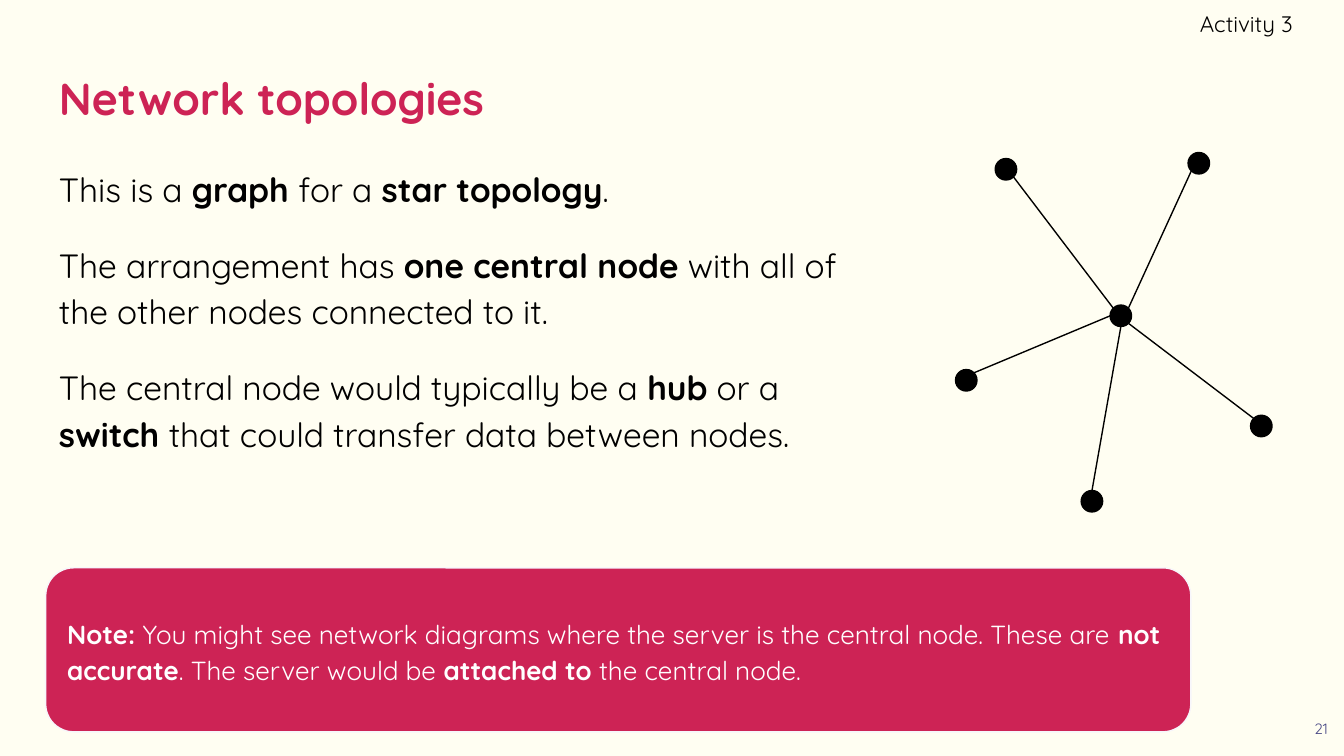
from lxml import etree
from pptx import Presentation
from pptx.dml.color import RGBColor
from pptx.enum.shapes import MSO_CONNECTOR, MSO_SHAPE
from pptx.enum.text import MSO_ANCHOR, PP_ALIGN
from pptx.oxml.ns import qn
from pptx.util import Pt

PX = 4572
FONT = "Quicksand"
BLACK, WHITE, CRIMSON = "000000", "FFFFFF", "CD2355"
CREAM, LILAC, INDIGO = "FFFEF2", "F7F6FB", "494985"
ROUNDED, OVAL = MSO_SHAPE.ROUNDED_RECTANGLE, MSO_SHAPE.OVAL
STRAIGHT = MSO_CONNECTOR.STRAIGHT
TOP, MIDDLE = MSO_ANCHOR.TOP, MSO_ANCHOR.MIDDLE
LEFT, CENTER, RIGHT = PP_ALIGN.LEFT, PP_ALIGN.CENTER, PP_ALIGN.RIGHT

NODE = 32
RIM = {
    "top": (16, 0), "left": (0, 16), "bottom": (16, 32),
    "top left": (5, 5), "top right": (27, 5),
    "bottom left": (5, 27), "bottom right": (27, 27),
}
HUB = (230, 227)
SPOKES = [
    ((59, 9), "top left", "bottom right"),
    ((346, 0), "top right", "bottom left"),
    ((439, 391), "bottom right", "top left"),
    ((187, 503), "bottom", "top"),
    ((0, 323), "left", "top right"),
]
EXPLANATION = [
    [("This is a ", False), ("graph ", True), ("for a ", False),
     ("star topology", True), (".", False)],
    [("The arrangement has ", False), ("one central node", True),
     (" with all of the other nodes connected to it.", False)],
    [("The central node would typically be a ", False), ("hub", True),
     (" or a ", False), ("switch ", True),
     ("that could transfer data between nodes.", False)],
]
NOTE = [
    ("Note:", True),
    (" You might see network diagrams where the server is the central node. These are ", False),
    ("not accurate", True), (". The server would be ", False),
    ("attached to", True), (" the central node.", False),
]


def px(*lengths):
    return [length * PX for length in lengths]


def rgb(code):
    return RGBColor.from_string(code)


def paint(shape, fill, line):
    shape.shadow.inherit = False
    shape.fill.solid()
    shape.fill.fore_color.rgb = rgb(fill)
    shape.line.color.rgb = rgb(line)
    shape.line.width = Pt(0.75)


def write(shape, paragraphs, size, color, anchor=TOP, align=LEFT,
          spacing=1.0, gap=0, right_inset=20):
    frame = shape.text_frame
    frame.word_wrap = True
    frame.vertical_anchor = anchor
    frame.margin_left, frame.margin_top, frame.margin_bottom = px(20, 20, 20)
    frame.margin_right = right_inset * PX
    for index, runs in enumerate(paragraphs):
        paragraph = frame.add_paragraph() if index else frame.paragraphs[0]
        paragraph.alignment = align
        paragraph.line_spacing = spacing
        if index:
            paragraph.space_before = Pt(gap)
        for words, bold in runs:
            run = paragraph.add_run()
            run.text = words
            run.font.name = FONT
            run.font.size = Pt(size)
            run.font.bold = bold
            run.font.color.rgb = rgb(color)


def add_text(slide, box, paragraphs, size, color, **layout):
    write(slide.shapes.add_textbox(*px(*box)), paragraphs, size, color, **layout)


def add_heading(slide, box):
    left, top, width, height = box
    label_height = 69
    add_text(slide, (left, top + label_height, width, height - label_height),
             [[("Network topologies", True)]], 24, CRIMSON, anchor=MIDDLE)
    add_text(slide, (left + 1428, top, 428, label_height),
             [[("Activity 3", False)]], 12, BLACK,
             anchor=MIDDLE, align=RIGHT, right_inset=0)


def add_explanation(slide, box):
    add_text(slide, box, EXPLANATION, 18, BLACK, spacing=1.15, gap=16)


def add_star_graph(slide, origin):
    left, top = origin

    def add_node(place):
        x, y = place
        node = slide.shapes.add_shape(OVAL, *px(left + x, top + y, NODE, NODE))
        paint(node, BLACK, BLACK)

    def rim_point(place, side):
        (x, y), (dx, dy) = place, RIM[side]
        return px(left + x + dx, top + y + dy)

    add_node(HUB)
    for place, hub_side, node_side in SPOKES:
        add_node(place)
        spoke = slide.shapes.add_connector(
            STRAIGHT, *rim_point(HUB, hub_side), *rim_point(place, node_side))
        spoke.line.color.rgb = rgb(BLACK)
        spoke.line.width = Pt(0.75)
        etree.SubElement(spoke._element.spPr, qn("a:effectLst"))


def add_note(slide, box):
    panel = slide.shapes.add_shape(ROUNDED, *px(*box))
    panel.adjustments[0] = 0.17
    paint(panel, CRIMSON, LILAC)
    write(panel, [NOTE], 14, WHITE, anchor=MIDDLE, spacing=1.15)
    panel.text_frame.paragraphs[0].space_after = Pt(16)


def add_page_number(slide, box):
    add_text(slide, box, [[("21", False)]], 8, INDIGO, align=CENTER)


def main():
    deck = Presentation()
    deck.slide_width, deck.slide_height = px(2000, 1125)
    slide = deck.slides.add_slide(deck.slide_layouts[6])
    slide.background.fill.solid()
    slide.background.fill.fore_color.rgb = rgb(CREAM)
    add_explanation(slide, (68, 222, 1220, 800))
    add_heading(slide, (68, 0, 1864, 221))
    add_page_number(slide, (1932, 1057, 68, 68))
    add_star_graph(slide, (1422, 227))
    add_note(slide, (68, 845, 1704, 244))
    deck.save("out.pptx")


if __name__ == "__main__":
    main()
